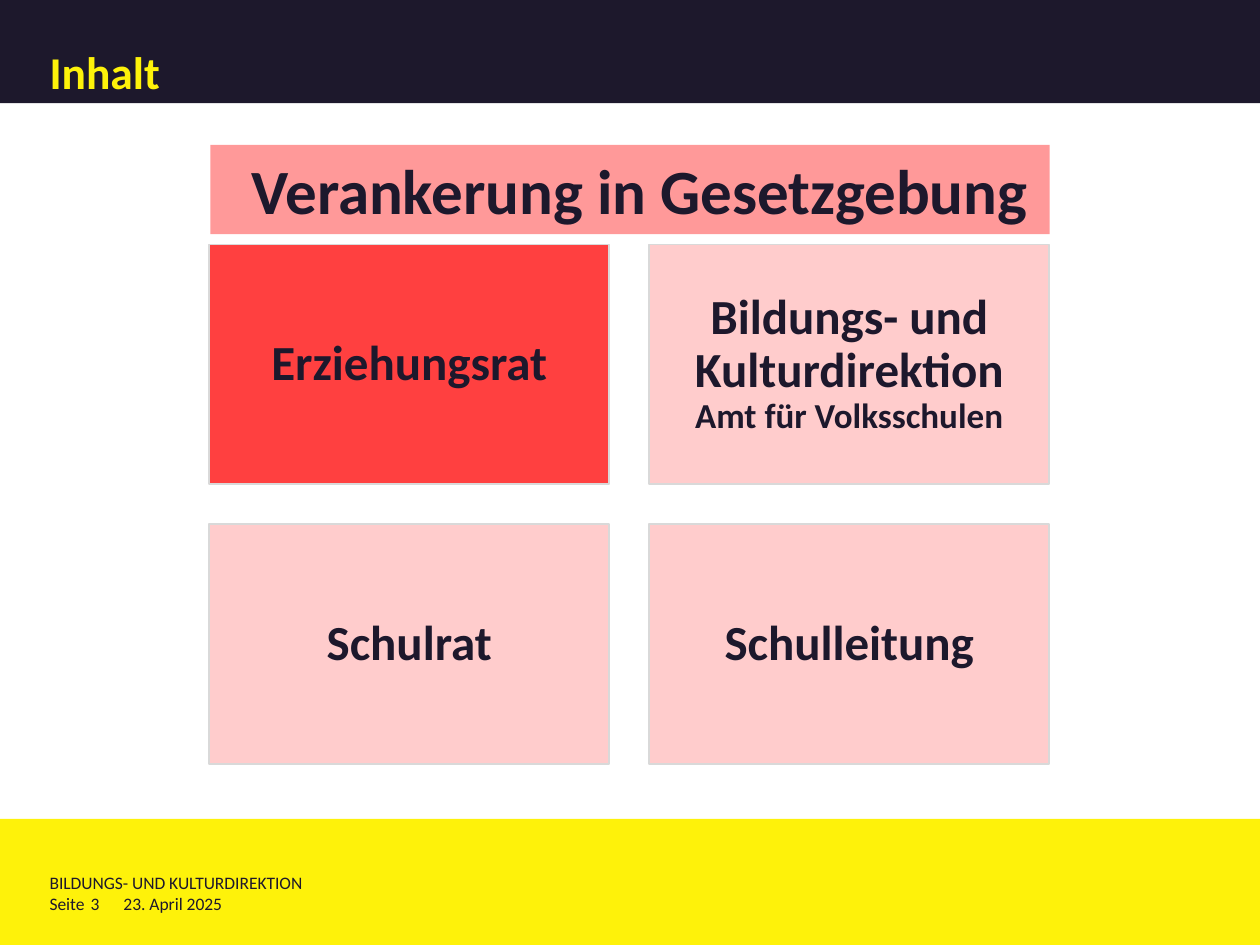
"""Build the contents slide on how school bodies are anchored in law."""
from dataclasses import dataclass

from pptx import Presentation
from pptx.dml.color import RGBColor
from pptx.enum.shapes import MSO_SHAPE as Shape
from pptx.enum.text import MSO_ANCHOR as Anchor, PP_ALIGN as Align
from pptx.slide import Slide
from pptx.util import Cm, Pt

NAVY = RGBColor(0x1D, 0x18, 0x2C)
YELLOW = RGBColor(0xFE, 0xF2, 0x0A)
RED = RGBColor(0xFF, 0x40, 0x40)
ROSE = RGBColor(0xFF, 0x99, 0x99)
PINK = RGBColor(0xFF, 0xCC, 0xCC)
GREY = RGBColor(0xD9, 0xD9, 0xD9)


@dataclass
class Page:
    """Holds the text style and the current slide."""

    slide: Slide
    font: str = "Calibri"
    ink: RGBColor = NAVY

    def label(self, shape, text, sizes, color=None, bold=True, align=Align.LEFT,
              anchor=Anchor.TOP, insets=(0, 0, 0, 0), spacing=1.0):
        """Fill a shape with one paragraph, one size for each run."""
        frame = shape.text_frame
        frame.word_wrap = True
        frame.vertical_anchor = anchor
        (frame.margin_left, frame.margin_top,
         frame.margin_right, frame.margin_bottom) = map(Cm, insets)
        paragraph = frame.paragraphs[0]
        paragraph.text = text
        paragraph.alignment = align
        paragraph.line_spacing = spacing
        for run, size in zip(paragraph.runs, sizes):
            run.font.name = self.font
            run.font.size = Pt(size)
            run.font.bold = bold
            run.font.color.rgb = color or self.ink

    def block(self, left, top, width, height, fill, outline=None):
        """Add a filled rectangle."""
        shape = self.slide.shapes.add_shape(
            Shape.RECTANGLE, Cm(left), Cm(top), Cm(width), Cm(height))
        shape.shadow.inherit = False
        shape.fill.solid()
        shape.fill.fore_color.rgb = fill
        if outline is None:
            shape.line.fill.background()
        else:
            shape.line.color.rgb = outline
            shape.line.width = Pt(1)
        return shape

    def note(self, left, top, width, text):
        """Add a small line of footer text."""
        box = self.slide.shapes.add_textbox(Cm(left), Cm(top), Cm(width), Cm(0.43))
        self.label(box, text, [10], bold=False)


def main():
    """Compose and save the slide."""
    deck = Presentation()
    deck.slide_width, deck.slide_height = Cm(25.4), Cm(19.05)
    page = Page(deck.slides.add_slide(deck.slide_layouts[6]))

    page.block(0, 16.51, 25.4, 2.54, YELLOW)
    page.note(1, 17.58, 19, "BILDUNGS- UND KULTURDIREKTION")
    for left, width, text in [(1, 0.89, "Seite"), (2.49, 5.79, "23. April 2025"),
                              (1.83, 0.6, "3")]:
        page.note(left, 18.01, width, text)

    title = page.block(0, 0, 25.4, 2.08, NAVY)
    page.label(title, "Inhalt", [26], YELLOW, anchor=Anchor.BOTTOM,
               insets=(1, 0.2, 0.2, 0.1), spacing=0.8)

    bodies = [("Erziehungsrat", RED),
              ("Bildungs- und Kulturdirektion\vAmt für Volksschulen", PINK),
              ("Schulrat", PINK),
              ("Schulleitung", PINK)]
    width, height, gap = 8.06, 4.83, 0.81
    for index, (name, fill) in enumerate(bodies):
        row, column = divmod(index, 2)
        body = page.block(4.22 + column * (width + gap), 4.93 + row * (height + gap),
                          width, height, fill, GREY)
        page.label(body, name, [28, 20], align=Align.CENTER, anchor=Anchor.MIDDLE,
                   insets=(0.3, 0.3, 0.3, 0.3), spacing=0.9)

    law = page.block(4.24, 2.92, 16.92, 1.8, ROSE)
    page.label(law, "Verankerung in Gesetzgebung", [36], insets=(0.83, 0.13, 0.25, 0.13))

    deck.save("out.pptx")


if __name__ == "__main__":
    main()
